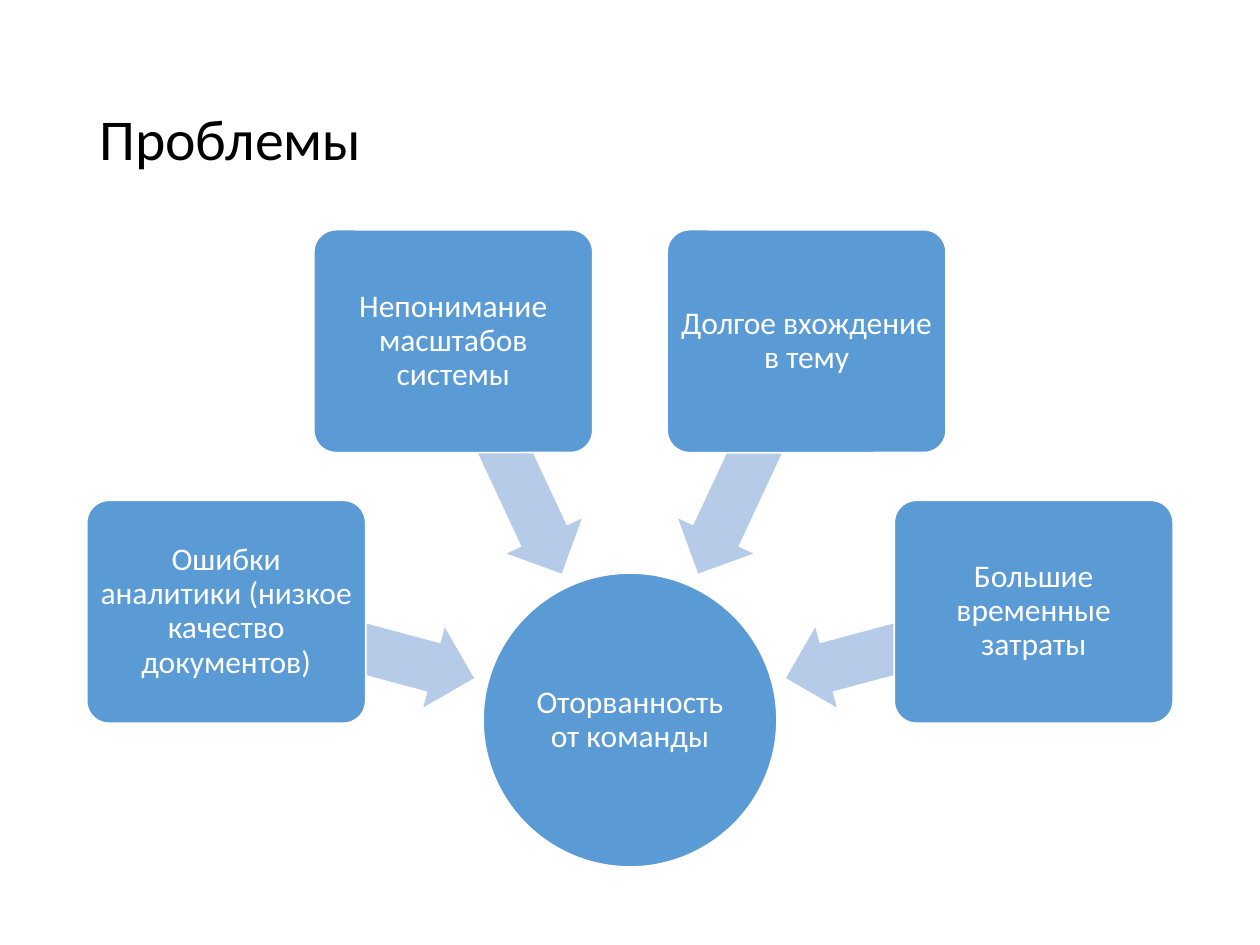
"""Build a slide with four problems converging on one central outcome."""
import math

import pptx
import pptx.dml.color
import pptx.enum.shapes
import pptx.enum.text
import pptx.util

TITLE = "Проблемы"
OUTCOME = "Оторванность от команды"
PROBLEMS = [
    "Ошибки аналитики (низкое качество документов)",
    "Непонимание масштабов системы",
    "Долгое вхождение в тему",
    "Большие временные затраты",
]
COLORS = {"node": "5B9BD5", "arrow": "B5CBE7", "white": "FFFFFF", "title": "000000"}
FONT = "Calibri"
PX = 914400 // 126
HUB = (630, 720)
HUB_SIZE = (294, 294)
BOX_SIZE = (279, 223)
ARROW_SIZE = (257, 83)
BOX_RADIUS, ARROW_RADIUS = 418, 290
FIRST_ANGLE, ANGLE_STEP = 195, 50
KIND = pptx.enum.shapes.MSO_SHAPE
ALIGN = pptx.enum.text.PP_ALIGN


def px(value):
    return round(value * PX)


def rgb(name):
    return pptx.dml.color.RGBColor.from_string(COLORS[name])


def around_hub(radius, angle):
    turn = math.radians(angle)
    return HUB[0] + radius * math.cos(turn), HUB[1] + radius * math.sin(turn)


def write(shape, text, size, color, align):
    frame = shape.text_frame
    frame.word_wrap = True
    frame.vertical_anchor = pptx.enum.text.MSO_ANCHOR.MIDDLE
    paragraph = frame.paragraphs[0]
    paragraph.alignment = align
    paragraph.line_spacing = 0.9
    run = paragraph.add_run()
    run.text = text
    run.font.name = FONT
    run.font.size = pptx.util.Pt(size)
    run.font.color.rgb = rgb(color)


def add_centered(slide, kind, center, size, fill, adjustments=()):
    left, top = (c - s / 2 for c, s in zip(center, size))
    shape = slide.shapes.add_shape(kind, px(left), px(top), px(size[0]), px(size[1]))
    shape.shadow.inherit = False
    shape.fill.solid()
    shape.fill.fore_color.rgb = rgb(fill)
    shape.line.fill.background()
    for index, value in enumerate(adjustments):
        shape.adjustments[index] = value
    return shape


def add_node(slide, kind, center, size, text, inset, adjustments=()):
    node = add_centered(slide, kind, center, size, "node", adjustments)
    node.line.color.rgb = rgb("white")
    node.line.width = pptx.util.Pt(1)
    frame = node.text_frame
    frame.margin_left = frame.margin_right = px(inset)
    frame.margin_top = frame.margin_bottom = px(inset)
    write(node, text, 18, "white", ALIGN.CENTER)


def main():
    deck = pptx.Presentation()
    deck.slide_width, deck.slide_height = px(1260), px(945)
    slide = deck.slides.add_slide(deck.slide_layouts[6])

    title = slide.shapes.add_textbox(px(87), px(50), px(1086), px(183))
    write(title, TITLE, 33, "title", ALIGN.LEFT)

    add_node(slide, KIND.OVAL, HUB, HUB_SIZE, OUTCOME, 1)
    for index, problem in enumerate(PROBLEMS):
        angle = FIRST_ANGLE + index * ANGLE_STEP
        arrow = add_centered(slide, KIND.LEFT_ARROW, around_hub(ARROW_RADIUS, angle),
                             ARROW_SIZE, "arrow", (0.6, 0.5))
        arrow.rotation = angle
        add_node(slide, KIND.ROUNDED_RECTANGLE, around_hub(BOX_RADIUS, angle),
                 BOX_SIZE, problem, 5, (0.1,))
    deck.save("out.pptx")


if __name__ == "__main__":
    main()
